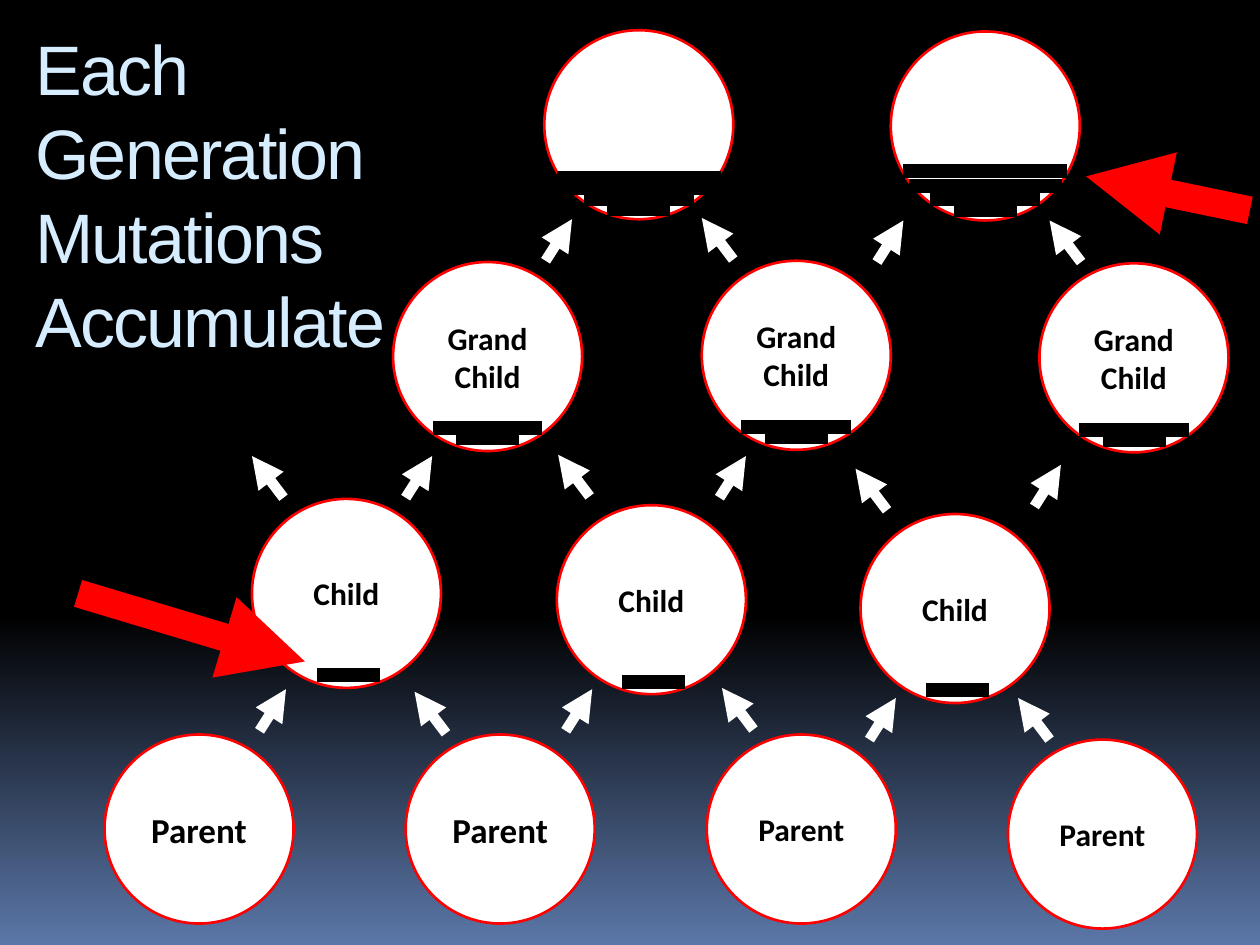
import pptx
import pptx.dml.color
import pptx.enum.shapes
import pptx.enum.text
import pptx.oxml
import pptx.oxml.ns
import pptx.util
from pptx.util import Inches

COLORS = {"night": "000000", "dusk": "5B77A8", "title": "D6ECFF",
          "cell": "FFFFFF", "alert": "FF0000", "text": "000000"}
TITLE = "Each Generation\vMutations Accumulate"
DIAMETER = 1.5

# Generations from the bottom up. Cells: (left, top, label size).
# Mutations: (offset below cell top, bar width), shifted sideways by "shift".
# Arrows: starting points of those leaning right and left.
GENERATIONS = [
    {"label": "Parent", "shift": 0, "mutations": [],
     "cells": [(0.83, 5.83, 20), (3.22, 5.83, 20), (5.61, 5.83, 18), (8, 5.87, 18)],
     "right": [], "left": []},
    {"label": "Child", "shift": 0.02, "mutations": [(1.4, 0.5)],
     "cells": [(2, 3.96, 18), (4.42, 4.01, 18), (6.83, 4.08, 18)],
     "right": [(2.06, 5.8), (4.49, 5.8), (6.9, 5.87)],
     "left": [(3.54, 5.82), (5.98, 5.79), (8.33, 5.87)]},
    {"label": "Grand Child", "shift": 0, "mutations": [(1.4, 0.5), (1.32, 0.87)],
     "cells": [(3.12, 2.08, 18), (5.57, 2.07, 18), (8.25, 2.09, 18)],
     "right": [(3.22, 3.95), (5.71, 3.95), (8.21, 4.02)],
     "left": [(2.25, 3.95), (4.68, 3.94), (7.04, 4.05)]},
    {"label": "", "shift": 0,
     "mutations": [(1.42, 0.5), (1.33, 0.87), (1.23, 1.21), (1.11, 1.3)],
     "cells": [(7.07, 0.25, 18)],
     "right": [(6.96, 2.08)], "left": [(8.58, 2.08)]},
    {"label": "", "shift": 0,
     "mutations": [(1.42, 0.5), (1.34, 0.87), (1.25, 1.21), (1.17, 1.3)],
     "cells": [(4.32, 0.24, 18)],
     "right": [(4.33, 2.07)], "left": [(5.82, 2.06)]},
]
LEAN = {"right": (0.21, -0.33), "left": (-0.25, -0.33)}
POINTERS = [((9.92, 1.67), (8.62, 1.4)), ((0.62, 4.71), (2.42, 5.25))]


def rgb(name):
    return pptx.dml.color.RGBColor.from_string(COLORS[name])


def apply(target, values):
    for name, value in values.items():
        setattr(target, name, value)


def add_line(slide, start, end, color, width, arrow=False):
    line = slide.shapes.add_connector(
        pptx.enum.shapes.MSO_CONNECTOR.STRAIGHT, *map(Inches, (*start, *end)))
    line.line.color.rgb = rgb(color)
    line.line.width = pptx.util.Pt(width)
    properties = line._element.spPr
    if arrow:
        head = pptx.oxml.parse_xml(
            f'<a:tailEnd {pptx.oxml.ns.nsdecls("a")} type="triangle"/>')
        properties.find(pptx.oxml.ns.qn("a:ln")).append(head)
    properties.append(pptx.oxml.parse_xml(
        f'<a:effectLst {pptx.oxml.ns.nsdecls("a")}/>'))


def add_cell(slide, left, top, label, size):
    cell = slide.shapes.add_shape(
        pptx.enum.shapes.MSO_SHAPE.OVAL,
        *map(Inches, (left, top, DIAMETER, DIAMETER)))
    cell.shadow.inherit = False
    cell.fill.solid()
    cell.fill.fore_color.rgb = rgb("cell")
    cell.line.color.rgb = rgb("alert")
    cell.line.width = pptx.util.Pt(1.5)
    if label:
        apply(cell.text_frame, {
            "text": label, "word_wrap": True,
            "vertical_anchor": pptx.enum.text.MSO_ANCHOR.MIDDLE})
        paragraph = cell.text_frame.paragraphs[0]
        paragraph.alignment = pptx.enum.text.PP_ALIGN.CENTER
        run = paragraph.runs[0]
        apply(run.font, {"name": "Calibri", "size": pptx.util.Pt(size), "bold": True})
        run.font.color.rgb = rgb("text")


def add_title(slide):
    title = slide.shapes.title
    apply(title, {"left": Inches(0.18), "top": Inches(0.15),
                  "width": Inches(3.24), "height": Inches(1.51)})
    apply(title.text_frame, {
        "text": TITLE, "word_wrap": True,
        "auto_size": pptx.enum.text.MSO_AUTO_SIZE.NONE,
        "vertical_anchor": pptx.enum.text.MSO_ANCHOR.TOP})
    paragraph = title.text_frame.paragraphs[0]
    apply(paragraph, {"alignment": pptx.enum.text.PP_ALIGN.LEFT,
                      "line_spacing": pptx.util.Pt(48)})
    for run in paragraph.runs:
        apply(run.font, {"name": "Arial", "size": pptx.util.Pt(40)})
        run.font.color.rgb = rgb("title")
        run._r.get_or_add_rPr().set("spc", "-100")


def add_generation(slide, generation):
    for left, top, size in generation["cells"]:
        add_cell(slide, left, top, generation["label"], size)
        center = left + DIAMETER / 2 + generation["shift"]
        for offset, width in generation["mutations"]:
            y = top + offset
            add_line(slide, (center - width / 2, y), (center + width / 2, y), "night", 8)
    for side, (dx, dy) in LEAN.items():
        for x, y in generation[side]:
            add_line(slide, (x, y), (x + dx, y + dy), "cell", 6, arrow=True)


def main():
    deck = pptx.Presentation()
    apply(deck, {"slide_width": Inches(10), "slide_height": Inches(7.5)})
    slide = deck.slides.add_slide(deck.slide_layouts[5])

    # Night sky background
    sky = slide.background.fill
    sky.gradient()
    sky.gradient_angle = 270
    for stop, color, position in zip(sky.gradient_stops, ("night", "dusk"), (0.65, 1)):
        stop.color.rgb = rgb(color)
        stop.position = position

    add_title(slide)

    # Family tree with its mutations
    for generation in GENERATIONS:
        add_generation(slide, generation)

    # Red pointers to the mutations
    for start, end in POINTERS:
        add_line(slide, start, end, "alert", 16, arrow=True)

    deck.save("out.pptx")


if __name__ == "__main__":
    main()
